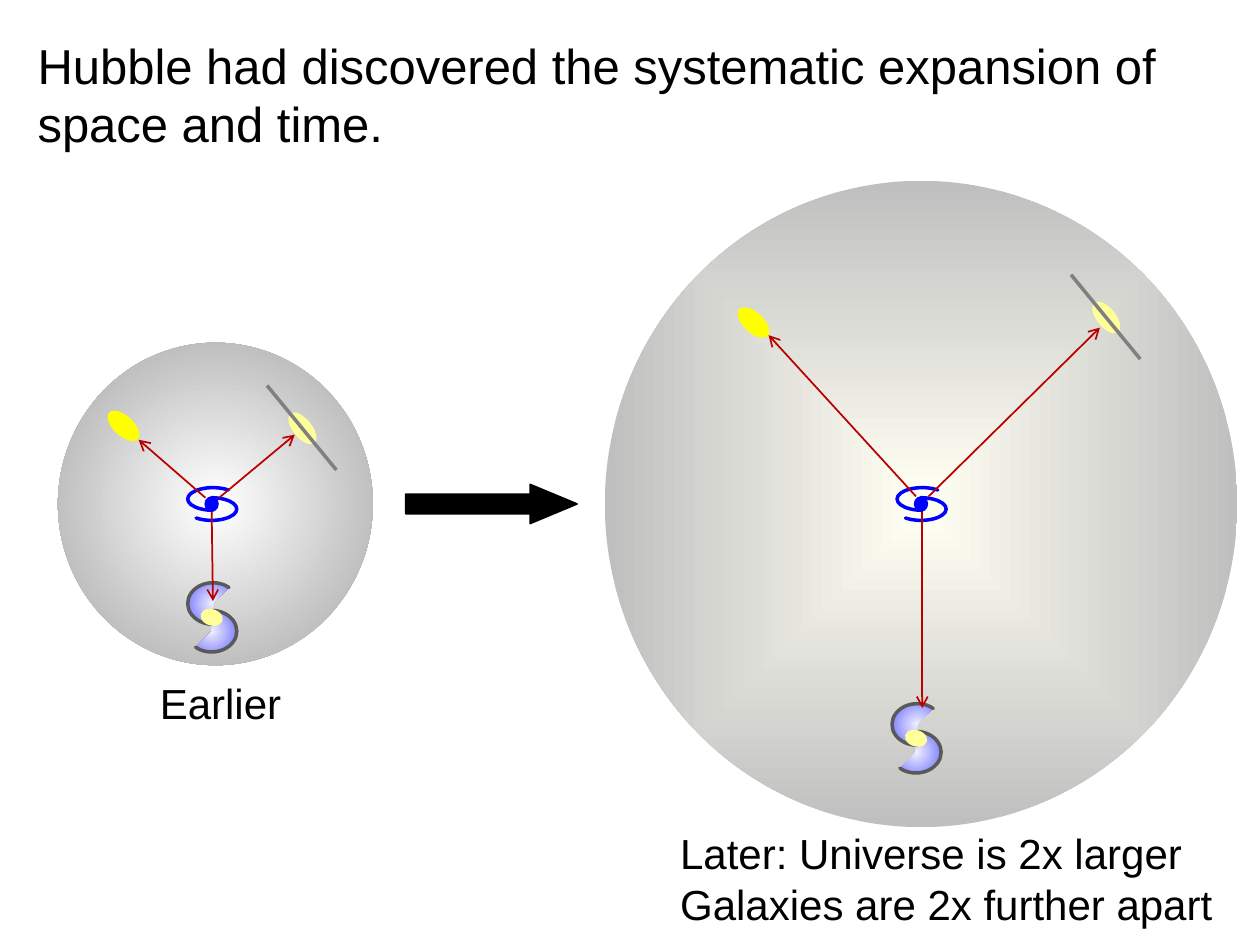
from lxml import etree
from pptx import Presentation
from pptx.dml.color import RGBColor
from pptx.enum.shapes import MSO_CONNECTOR, MSO_SHAPE
from pptx.enum.text import MSO_ANCHOR, PP_ALIGN
from pptx.oxml import parse_xml
from pptx.oxml.ns import nsdecls, qn
from pptx.util import Inches, Pt

# A gradient is (path type, [(percent, colour), ...])
SPHERE_EARLIER = ("circle", [(0, "FFFFFF"), (100, "A6A6A6")])
SPHERE_LATER = ("shape", [(0, "FFFFF3"), (100, "BFBFBF")])
LILAC = ("circle", [(0, "F2F2FF"), (74, "8C8CFF"), (83, "8C8CFF"), (100, "B2B2FF")])


def add_centred(shapes, kind, x, y, w, h, fill=None, line=None, width=1, rot=0):
    """Add a preset shape centred on x, y; fill is a hex colour or a gradient."""
    sp = shapes.add_shape(kind, Inches(x - w / 2), Inches(y - h / 2), Inches(w), Inches(h))
    sp.shadow.inherit = False
    sp.rotation = rot
    if fill is None:
        sp.fill.background()
    elif isinstance(fill, str):
        sp.fill.solid()
        sp.fill.fore_color.rgb = RGBColor.from_string(fill)
    else:
        kind_of_path, stops = fill
        gs = "".join(f'<a:gs pos="{pos * 1000}"><a:srgbClr val="{c}"/></a:gs>' for pos, c in stops)
        sp._element.spPr.insert(2, parse_xml(
            f'<a:gradFill {nsdecls("a")} rotWithShape="1"><a:gsLst>{gs}</a:gsLst>'
            f'<a:path path="{kind_of_path}">'
            '<a:fillToRect l="50000" t="50000" r="50000" b="50000"/></a:path></a:gradFill>'))
    if line:
        sp.line.color.rgb = RGBColor.from_string(line)
        sp.line.width = Pt(width)
    else:
        sp.line.fill.background()
    return sp


def add_line(shapes, x1, y1, x2, y2, color, width, arrow=False):
    cn = shapes.add_connector(MSO_CONNECTOR.STRAIGHT, Inches(x1), Inches(y1), Inches(x2), Inches(y2))
    cn.line.color.rgb = RGBColor.from_string(color)
    cn.line.width = Pt(width)
    if arrow:
        etree.SubElement(cn.line._get_or_add_ln(), qn("a:tailEnd"), type="arrow")
    etree.SubElement(cn._element.spPr, qn("a:effectLst"))


prs = Presentation()
prs.slide_width, prs.slide_height = Inches(10), Inches(7.5)
s = prs.slides.add_slide(prs.slide_layouts[6])

# Title and captions: left, top, width, height, size, wrap, anchor, alignment, lines
texts = [
    (0.2, 0.2, 9.57, 1.09, 28, True, MSO_ANCHOR.MIDDLE, PP_ALIGN.LEFT,
     ["Hubble had discovered the systematic expansion of space and time."]),
    (5.3, 6.52, 4.47, 0.91, 24, False, MSO_ANCHOR.TOP, PP_ALIGN.LEFT,
     ["Later: Universe is 2x larger", "Galaxies are 2x further apart"]),
    (1.16, 5.33, 1.18, 0.5, 24, False, MSO_ANCHOR.TOP, PP_ALIGN.CENTER, ["Earlier"]),
]
for left, top, w, h, size, wrap, anchor, align, lines in texts:
    tf = s.shapes.add_textbox(Inches(left), Inches(top), Inches(w), Inches(h)).text_frame
    tf.word_wrap = wrap
    tf.vertical_anchor = anchor
    tf.text = "\n".join(lines)
    for p in tf.paragraphs:
        p.alignment = align
        p.font.size = Pt(size)
        p.font.name = "Arial"
        p.font.color.rgb = RGBColor.from_string("000000")

# Arrow from the earlier to the later universe
sp = add_centred(s.shapes, MSO_SHAPE.RIGHT_ARROW, 3.9, 4, 1.36, 0.31, "000000", "000000")
sp.adjustments[1] = 1.2

# Universes: sphere box and fill, then centres of the four galaxies
universes = [
    ((1.71, 4, 2.5, 2.56), SPHERE_EARLIER, (0.98, 3.38), (2.4, 3.4), (1.68, 4), (1.68, 4.9)),
    ((7.31, 4, 5.02, 5.13), SPHERE_LATER, (5.98, 2.56), (8.78, 2.52), (7.31, 4), (7.27, 5.86)),
]
# Spirals: core fill, arm fill, arm line, arm height, arm offset, end angle of the lower arm
blue_spiral = ("0000FF", None, "0000FF", 0.18, 0.04, 150)
lilac_spiral = (LILAC, LILAC, "595959", 0.33, 0.11, 135)

for sphere, sphere_fill, elliptical, edge_on, blue, lilac in universes:
    shapes = s.shapes.add_group_shape().shapes
    add_centred(shapes, MSO_SHAPE.OVAL, *sphere, sphere_fill)
    add_centred(shapes, MSO_SHAPE.OVAL, *elliptical, 0.31, 0.16, "FFFF00", rot=43)

    # Edge-on galaxy: bulge and disc
    x, y = edge_on
    add_centred(shapes, MSO_SHAPE.OVAL, x, y, 0.3, 0.15, "FFFF99", rot=51)
    add_line(shapes, x - 0.28, y - 0.34, x + 0.27, y + 0.33, "808080", 2)

    # Spiral galaxies: core, lower arm, upper arm
    for (x, y), spiral in ((blue, blue_spiral), (lilac, lilac_spiral)):
        core, arm_fill, arm_line, h, offset, end = spiral
        add_centred(shapes, MSO_SHAPE.OVAL, x, y, 0.1, 0.11, core, "0000FF")
        for dx, dy, start, stop in ((0, offset, 270, end), (0.01, -offset, 90, end + 180)):
            arm = add_centred(shapes, MSO_SHAPE.ARC, x + dx, y + dy, 0.4, h, arm_fill, arm_line, 2)
            arm.adjustments[0], arm.adjustments[1] = start * 0.6, stop * 0.6
            arm.line._get_or_add_ln().set("cap", "rnd")
    add_centred(shapes, MSO_SHAPE.OVAL, *lilac, 0.18, 0.13, "FFFF99", rot=16.8)

# Distances from the blue galaxy to the others
for ends in [
    (1.74, 3.95, 2.34, 3.45), (1.68, 4.06, 1.69, 4.77), (1.63, 3.95, 1.1, 3.49),
    (7.37, 3.94, 8.73, 2.6), (7.32, 4.06, 7.32, 5.62), (7.27, 3.94, 6.1, 2.66),
]:
    add_line(s.shapes, *ends, "BB0000", 1, arrow=True)

prs.save("out.pptx")
